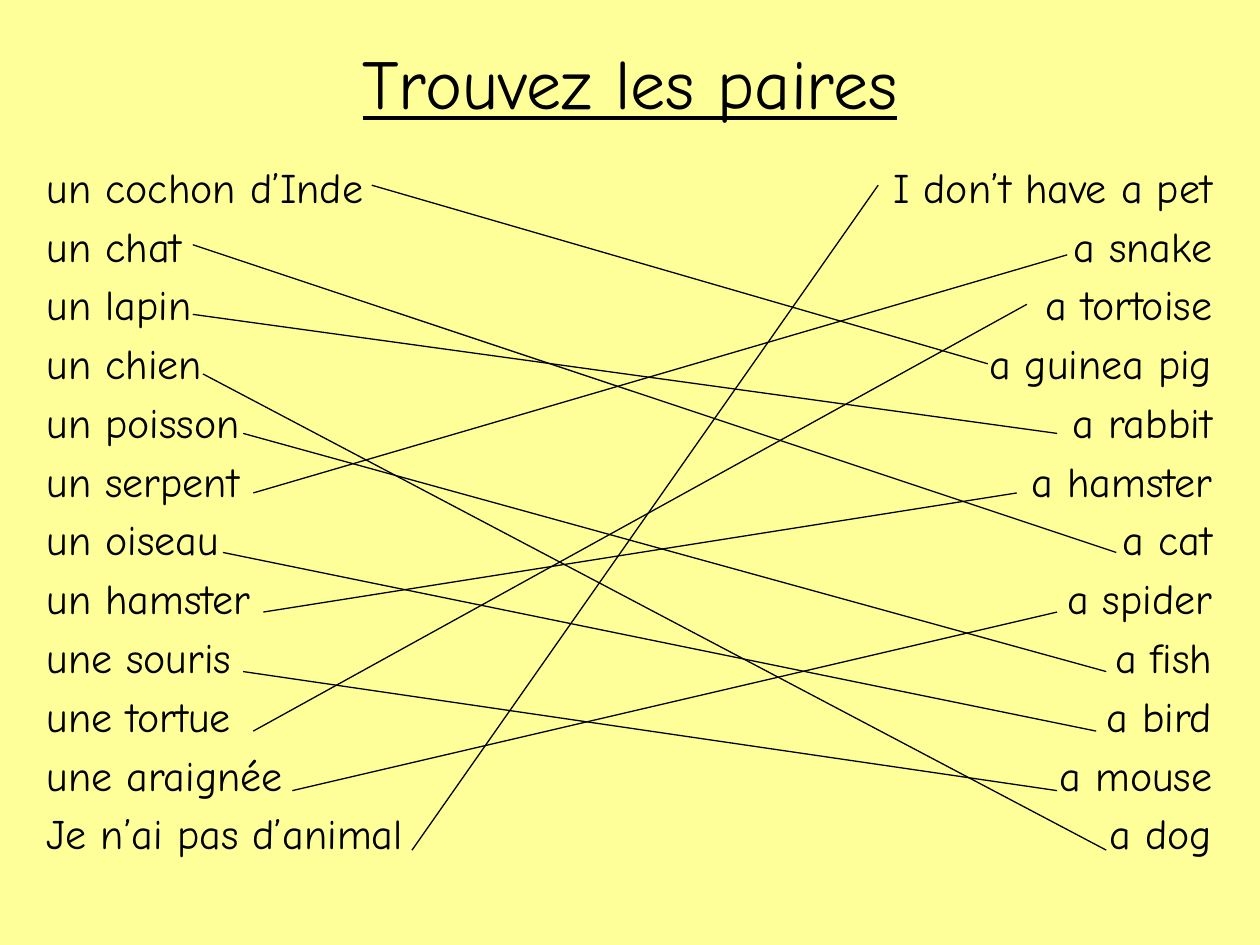
from pptx import Presentation, util as u
from pptx.dml.color import RGBColor
from pptx.enum import shapes, text
from pptx.oxml.ns import qn
from lxml import etree

FONT = "Comic Neue"
INK = "000000"
PAPER = "FFFF99"

FRENCH = ["un cochon d’Inde", "un chat", "un lapin", "un chien", "un poisson",
          "un serpent", "un oiseau", "un hamster", "une souris", "une tortue",
          "une araignée", "Je n’ai pas d’animal"]
ENGLISH = ["I don’t have a pet", "a snake", "a tortoise", "a guinea pig",
           "a rabbit", "a hamster", "a cat", "a spider", "a fish", "a bird",
           "a mouse", "a dog"]

# For each French row: line start x, matching English row, line end x
PAIRS = [(2.95, 3, 7.84), (1.53, 6, 8.86), (1.53, 4, 8.39), (1.61, 11, 8.78),
         (1.93, 8, 8.78), (2.01, 1, 8.47), (1.77, 9, 8.7), (2.09, 5, 8.07),
         (1.93, 10, 8.39), (2.01, 2, 8.15), (2.32, 7, 8.39), (3.27, 0, 6.97)]

# Line ends follow the rows; those beside these rows sit slightly lower
FIRST_ROW, ROW, DROP = 1.47, 0.4725, 0.08
LOW_FRENCH = set(range(2, 12))
LOW_ENGLISH = {1, *range(4, 12)}


def colour(value):
    return RGBColor.from_string(value)


def place(holder, box):
    holder.left, holder.top, holder.width, holder.height = map(u.Inches, box)
    holder.text_frame.auto_size = text.MSO_AUTO_SIZE.NONE
    holder.text_frame.word_wrap = True


def write(paragraph, words, size=24, align=text.PP_ALIGN.LEFT, underline=None):
    paragraph.alignment = align
    run = paragraph.add_run()
    run.text = words
    run.font.name = FONT
    run.font.size = u.Pt(size)
    run.font.underline = underline
    run.font.color.rgb = colour(INK)


def add_title(holder, box, words):
    place(holder, box)
    holder.text_frame.vertical_anchor = text.MSO_ANCHOR.MIDDLE
    write(holder.text_frame.paragraphs[0], words, size=40,
          align=text.PP_ALIGN.CENTER, underline=True)


def add_word_list(holder, box, words, align):
    place(holder, box)
    frame = holder.text_frame
    for row, word in enumerate(words):
        paragraph = frame.add_paragraph() if row else frame.paragraphs[0]
        write(paragraph, word, align=align)
        etree.SubElement(paragraph._p.get_or_add_pPr(), qn("a:buNone"))


def row_y(row, low_rows):
    return FIRST_ROW + row * ROW + (DROP if row in low_rows else 0)


def add_matching_lines(slide):
    for french, (start_x, english, end_x) in enumerate(PAIRS):
        ends = (start_x, row_y(french, LOW_FRENCH),
                end_x, row_y(english, LOW_ENGLISH))
        line = slide.shapes.add_connector(shapes.MSO_CONNECTOR.STRAIGHT,
                                          *map(u.Inches, ends))
        line.line.color.rgb = colour(INK)
        line.line.width = u.Pt(0.75)
        etree.SubElement(line._element.spPr, qn("a:effectLst"))


def main():
    deck = Presentation()
    deck.slide_width, deck.slide_height = u.Inches(10), u.Inches(7.5)
    slide = deck.slides.add_slide(deck.slide_layouts.get_by_name("Two Content"))
    slide.background.fill.solid()
    slide.background.fill.fore_color.rgb = colour(PAPER)

    # Title and the two word lists
    title, french, english = slide.placeholders
    add_title(title, (0.5, 0.3, 9, 0.69), "Trouvez les paires")
    add_word_list(french, (0.27, 1.23, 4.64, 5.9), FRENCH, text.PP_ALIGN.LEFT)
    add_word_list(english, (5.08, 1.23, 4.64, 5.9), ENGLISH, text.PP_ALIGN.RIGHT)

    # Lines joining each word to its translation
    add_matching_lines(slide)
    deck.save("out.pptx")


if __name__ == "__main__":
    main()
